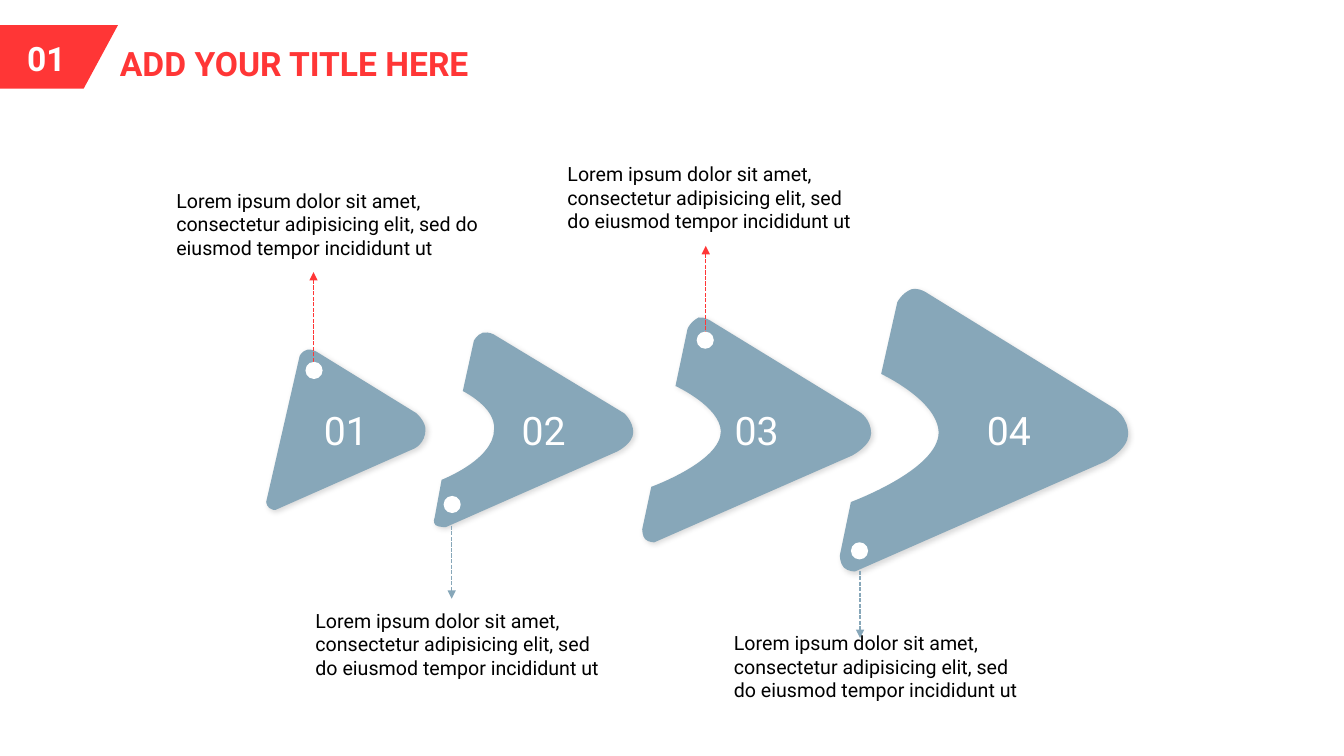
from copy import deepcopy
from dataclasses import dataclass

from lxml import etree
from pptx import Presentation, util as u
from pptx.dml.color import RGBColor
from pptx.enum import dml, shapes, text
from pptx.oxml.ns import qn


@dataclass(frozen=True)
class Theme:
    font: str = "Roboto"
    red: str = "FF3636"
    steel: str = "87A7B9"
    white: str = "FFFFFF"
    black: str = "000000"
    title_pt: int = 24
    number_pt: int = 28
    body_pt: int = 14


T = Theme()
TITLE = ("ADD YOUR TITLE HERE", (1.09, 0.38, 4.14, 0.5))
SECTION = ("01.", (0.17, 0.33, 0.63, 0.5))
BANNER = [(0, 0.25), (1.17, 0.25), (0.83, 0.88), (0, 0.88)]
LOREM = ("Lorem ipsum dolor sit amet, consectetur adipisicing elit, "
         "sed do eiusmod tempor incididunt ut")

# Each wedge: number, left text inset, and its rounds (nose, tail, notch, top).
# A round is: entry, pull in, middle, pull out, exit. Straight edges join rounds.
WEDGES = [
    ("03", 0.1, [
        [(8.53, 4.09), (8.64, 4.16), (8.64, 4.3), (8.64, 4.42), (8.45, 4.52)],
        [(6.49, 5.38), (6.43, 5.38), (6.4, 5.35), (6.37, 5.32), (6.37, 5.25)],
        [(6.46, 4.83), (7.15, 4.58), (7.15, 4.28), (7.14, 4.03), (6.7, 3.83)],
        [(6.82, 3.26), (6.85, 3.19), (6.93, 3.15), (6.99, 3.14), (7.06, 3.19)]]),
    ("02", 0.31, [
        [(6.19, 4.1), (6.28, 4.18), (6.28, 4.29), (6.28, 4.4), (6.12, 4.48)],
        [(4.42, 5.23), (4.35, 5.23), (4.32, 5.21), (4.29, 5.18), (4.31, 5.14)],
        [(4.38, 4.76), (4.9, 4.56), (4.9, 4.26), (4.92, 4.04), (4.59, 3.88)],
        [(4.7, 3.38), (4.73, 3.32), (4.79, 3.3), (4.85, 3.29), (4.9, 3.32)]]),
    ("01", 0.1, [
        [(4.13, 4.1), (4.22, 4.18), (4.22, 4.26), (4.22, 4.4), (4.11, 4.45)],
        [(2.73, 5.06), (2.69, 5.06), (2.67, 5.04), (2.64, 5.01), (2.64, 4.98)],
        [(2.97, 3.54), (2.98, 3.49), (3.05, 3.47), (3.09, 3.46), (3.14, 3.49)]]),
    ("04", 0.59, [
        [(11.05, 4.05), (11.19, 4.13), (11.19, 4.31), (11.19, 4.46), (10.96, 4.58)],
        [(8.48, 5.67), (8.41, 5.67), (8.37, 5.63), (8.33, 5.59), (8.33, 5.51)],
        [(8.44, 4.98), (9.31, 4.66), (9.31, 4.29), (9.3, 3.97), (8.74, 3.71)],
        [(8.9, 3), (8.94, 2.91), (9.04, 2.87), (9.12, 2.85), (9.2, 2.91)]]),
]
UP, DOWN = -1, 1
ARROWS = [(3.11, 3.59, UP), (7, 3.33, UP), (4.48, 5.05, DOWN), (8.53, 5.44, DOWN)]
DOTS = [(3.03, 3.59), (4.4, 4.92), (6.91, 3.29), (8.44, 5.38)]
NOTES = [(1.65, 1.82, 3.22), (3.03, 5.99, 3.12), (5.53, 1.56, 3.11), (7.18, 6.21, 3.12)]
ARROW_LENGTH, DOT_SIZE, NOTE_HEIGHT = 0.89, 0.17, 0.81

prs = Presentation()
prs.slide_width, prs.slide_height = u.Inches(13.33), u.Inches(7.5)
s = prs.slides.add_slide(prs.slide_layouts[6])


def rgb(color):
    return RGBColor.from_string(color)


def inches(values):
    return [u.Inches(v) for v in values]


def paint(sp, color):
    sp.shadow.inherit = False
    sp.fill.solid()
    sp.fill.fore_color.rgb = rgb(color)
    sp.line.fill.background()
    return sp


def add_outline(points, color):
    start, *rest = [inches(p) for p in points]
    builder = s.shapes.build_freeform(*start)
    builder.add_line_segments(rest, close=True)
    return paint(builder.convert_to_shape(), color)


def write(tf, words, size, color, bold=False):
    p = tf.paragraphs[0]
    r = p.add_run()
    r.text = words
    r.font.name, r.font.size, r.font.bold = T.font, u.Pt(size), bold
    r.font.color.rgb = rgb(color)
    return p


def add_text(words, box, size, color, bold=False):
    tf = s.shapes.add_textbox(*inches(box)).text_frame
    tf.word_wrap = True
    write(tf, words, size, color, bold)


def bend(sp):
    """Turn each five-node round of the outline into two Bezier curves."""
    contour = sp._element.find(".//" + qn("a:path"))
    nodes = [n for n in contour if n.tag != qn("a:close")]
    for i in range(0, len(nodes), 5):
        entry, pull_in, middle, pull_out, leave = nodes[i:i + 5]
        for controls in ((entry, pull_in, middle), (pull_out, leave, leave)):
            curve = etree.Element(qn("a:cubicBezTo"))
            curve.extend([deepcopy(n[0]) for n in controls])
            pull_in.addprevious(curve)
        for n in (pull_in, middle, pull_out, leave):
            contour.remove(n)


def cast_shadow(sp):
    effects = sp._element.spPr.find(qn("a:effectLst"))
    shadow = etree.SubElement(effects, qn("a:outerShdw"), blurRad=str(u.Pt(4)),
                              dist=str(u.Pt(2)), dir=str(45 * 60000),
                              algn="tl", rotWithShape="0")
    color = etree.SubElement(shadow, qn("a:srgbClr"), val=T.black)
    etree.SubElement(color, qn("a:alpha"), val="15000")


def add_wedge(number, inset, rounds):
    sp = add_outline(sum(rounds, []), T.steel)
    bend(sp)
    cast_shadow(sp)
    tf = sp.text_frame
    tf.margin_left = u.Inches(inset)
    tf.vertical_anchor = text.MSO_ANCHOR.MIDDLE
    write(tf, number, T.number_pt, T.white).alignment = text.PP_ALIGN.CENTER


def add_arrow(x, y, direction):
    c = s.shapes.add_connector(shapes.MSO_CONNECTOR.STRAIGHT,
                               *inches((x, y, x, y + direction * ARROW_LENGTH)))
    c.line.color.rgb = rgb(T.red if direction == UP else T.steel)
    c.line.width = u.Pt(1)
    c.line.dash_style = dml.MSO_LINE.SQUARE_DOT
    line = c._element.spPr.find(qn("a:ln"))
    etree.SubElement(line, qn("a:tailEnd"), type="triangle")
    etree.SubElement(c._element.spPr, qn("a:effectLst"))


add_outline(BANNER, T.red)
add_text(*TITLE, T.title_pt, T.red, bold=True)
add_text(*SECTION, T.title_pt, T.white, bold=True)
for wedge in WEDGES:
    add_wedge(*wedge)
for arrow in ARROWS:
    add_arrow(*arrow)
for dot in DOTS:
    box = inches((*dot, DOT_SIZE, DOT_SIZE))
    paint(s.shapes.add_shape(shapes.MSO_SHAPE.OVAL, *box), T.white)
for left, top, width in NOTES:
    add_text(LOREM, (left, top, width, NOTE_HEIGHT), T.body_pt, T.black)

prs.save("out.pptx")
